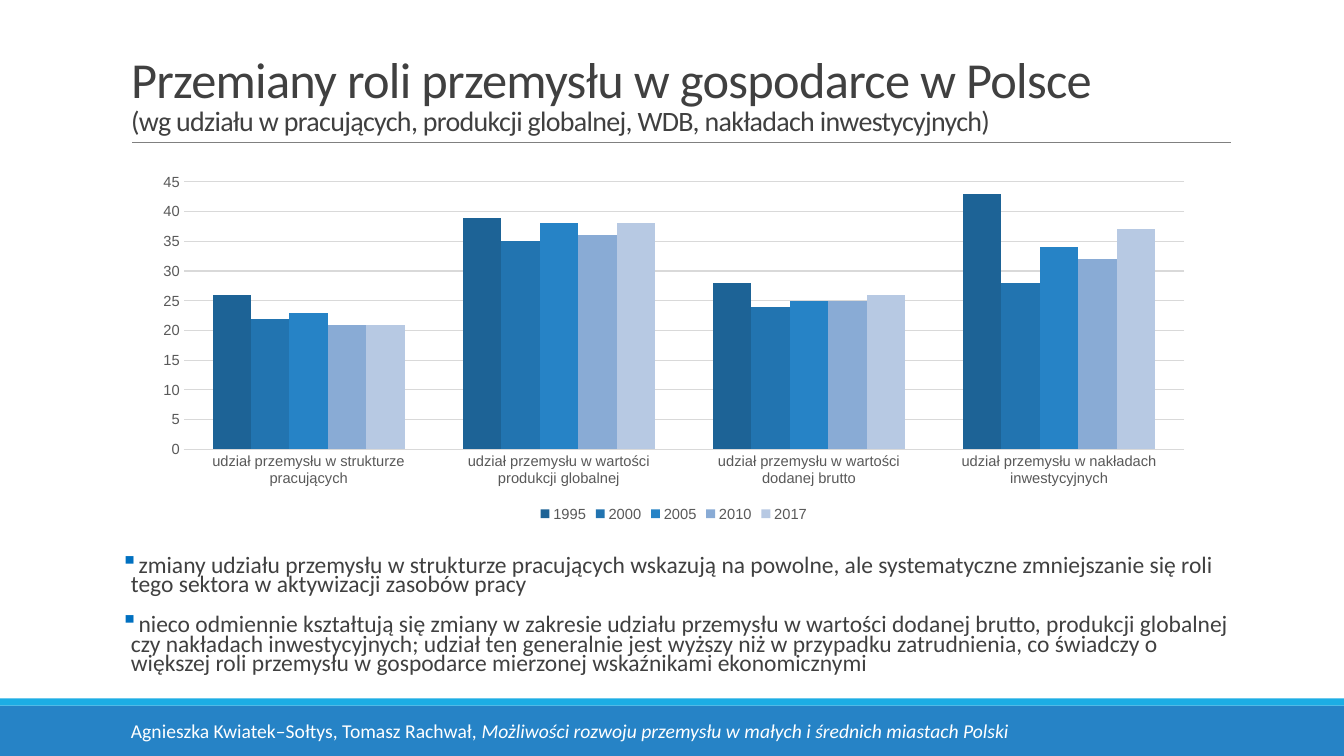
from dataclasses import dataclass
from lxml.etree import SubElement
from pptx import Presentation
from pptx.chart.data import CategoryChartData
from pptx.dml.color import RGBColor
from pptx.enum.chart import XL_CHART_TYPE, XL_LEGEND_POSITION, XL_TICK_MARK
from pptx.enum.shapes import MSO_CONNECTOR, MSO_SHAPE
from pptx.enum.text import MSO_ANCHOR, MSO_AUTO_SIZE, PP_ALIGN
from pptx.oxml.ns import qn
from pptx.util import Cm, Pt


@dataclass(frozen=True)
class Theme:
    """Colours, fonts and type sizes of the slide."""
    ink: str = "404040"
    label: str = "595959"
    grid: str = "D9D9D9"
    rule: str = "808080"
    bullet: str = "0070C0"
    band: str = "2683C6"
    strip: str = "1CADE4"
    white: str = "FFFFFF"
    bars: tuple = ("1D6396", "2274B0", "2683C6", "89ABD5", "B7C9E3")
    face: str = "Calibri"
    chart: str = "Arial"
    head: float = 36
    sub: float = 20
    body: float = 16.8
    foot: float = 14
    small: float = 10.5


THEME = Theme()
CATS = [
    "udział przemysłu w strukturze pracujących",
    "udział przemysłu w wartości produkcji globalnej",
    "udział przemysłu w wartości dodanej brutto",
    "udział przemysłu w nakładach inwestycyjnych",
]
SHARES = {
    "1995": (26, 39, 28, 43),
    "2000": (22, 35, 24, 28),
    "2005": (23, 38, 25, 34),
    "2010": (21, 36, 25, 32),
    "2017": (21, 38, 26, 37),
}
POINTS = [
    "zmiany udziału przemysłu w strukturze pracujących wskazują na powolne, ale "
    "systematyczne zmniejszanie się roli tego sektora w aktywizacji zasobów pracy",
    "nieco odmiennie kształtują się zmiany w zakresie udziału przemysłu w wartości "
    "dodanej brutto, produkcji globalnej czy nakładach inwestycyjnych; udział ten "
    "generalnie jest wyższy niż w przypadku zatrudnienia, co świadczy o większej "
    "roli przemysłu w gospodarce mierzonej wskaźnikami ekonomicznymi",
]


def rgb(code):
    """Turn a hex code into a colour."""
    return RGBColor.from_string(code)


def write(para, text, size, color=THEME.ink, italic=False, track=None):
    """Add one formatted run to a paragraph."""
    run = para.add_run()
    run.text = text
    font = run.font
    font.name, font.size, font.italic = THEME.face, Pt(size), italic
    font.color.rgb = rgb(color)
    if track is not None:
        font._element.set("spc", str(track))


def mark(para):
    """Give a paragraph a hanging square bullet."""
    props = para._p.get_or_add_pPr()
    props.set("marL", str(Cm(0.25)))
    props.set("indent", str(-Cm(0.5)))
    tint = SubElement(props, qn("a:buClr"))
    SubElement(tint, qn("a:srgbClr"), val=THEME.bullet)
    SubElement(props, qn("a:buChar"), char="▪")


def band(slide, top, high, color):
    """Draw a plain bar across the full slide width."""
    bar = slide.shapes.add_shape(MSO_SHAPE.RECTANGLE, 0, Cm(top), Cm(33.87), Cm(high))
    bar.shadow.inherit = False
    bar.fill.solid()
    bar.fill.fore_color.rgb = rgb(color)
    bar.line.fill.background()


def rule(slide, left, right, top):
    """Draw the thin line under the title."""
    line = slide.shapes.add_connector(
        MSO_CONNECTOR.STRAIGHT, Cm(left), Cm(top), Cm(right), Cm(top))
    line.line.color.rgb = rgb(THEME.rule)
    line.line.width = Pt(0.5)
    SubElement(line._element.spPr, qn("a:effectLst"))


def box(slide, left, top, wide, high):
    """Add a wrapping text box and return its frame."""
    frame = slide.shapes.add_textbox(Cm(left), Cm(top), Cm(wide), Cm(high)).text_frame
    frame.word_wrap = True
    return frame


def title(slide):
    """Place and fill the title placeholder."""
    head = slide.shapes.title
    head.left, head.top, head.width, head.height = Cm(3.05), Cm(0.79), Cm(27.33), Cm(2.79)
    frame = head.text_frame
    frame.word_wrap = True
    frame.auto_size = MSO_AUTO_SIZE.NONE
    frame.vertical_anchor = MSO_ANCHOR.BOTTOM
    para = frame.paragraphs[0]
    para.alignment = PP_ALIGN.LEFT
    para.line_spacing = 0.85
    write(para, "Przemiany roli przemysłu w gospodarce w Polsce", THEME.head, track=-50)
    para.add_line_break()
    write(para, "(wg udziału w pracujących, produkcji globalnej, WDB, nakładach "
          "inwestycyjnych)", THEME.sub, track=-50)


def points(slide):
    """Write the bulleted findings."""
    frame = box(slide, 3.05, 13.92, 28.22, 3.53)
    frame.margin_left = frame.margin_right = 0
    for index, text in enumerate(POINTS):
        para = frame.add_paragraph() if index else frame.paragraphs[0]
        mark(para)
        para.line_spacing = 0.7
        para.space_before = Pt(12 if index else 0)
        para.space_after = Pt(2)
        write(para, text, THEME.body)


def footer(slide):
    """Draw the bottom bars and the credit line."""
    band(slide, 17.78, 1.27, THEME.band)
    band(slide, 17.6, 0.18, THEME.strip)
    frame = box(slide, 3.05, 17.98, 27.94, 0.86)
    frame.auto_size = MSO_AUTO_SIZE.SHAPE_TO_FIT_TEXT
    para = frame.paragraphs[0]
    write(para, "Agnieszka Kwiatek–Sołtys, Tomasz Rachwał, ", THEME.foot, THEME.white)
    write(para, "Możliwości rozwoju przemysłu w małych i średnich miastach Polski",
          THEME.foot, THEME.white, italic=True)


def style(font):
    """Format chart lettering."""
    font.name, font.size = THEME.chart, Pt(THEME.small)
    font.color.rgb = rgb(THEME.label)


def stroke(line):
    """Format a pale chart line."""
    line.color.rgb = rgb(THEME.grid)
    line.width = Pt(0.75)


def chart(slide):
    """Add the column chart of industry shares."""
    data = CategoryChartData(number_format="0")
    data.categories = CATS
    for year, shares in SHARES.items():
        data.add_series(year, shares)
    graph = slide.shapes.add_chart(
        XL_CHART_TYPE.COLUMN_CLUSTERED, Cm(3.58), Cm(4.19), Cm(26.8), Cm(9.07), data).chart
    style(graph.font)
    graph.has_title = False
    graph.has_legend = True
    graph.legend.position = XL_LEGEND_POSITION.BOTTOM
    graph.legend.include_in_layout = False
    style(graph.legend.font)
    plot = graph.plots[0]
    plot.gap_width, plot.overlap, plot.vary_by_categories = 150, 0, False
    for series, color in zip(plot.series, THEME.bars):
        series.format.fill.solid()
        series.format.fill.fore_color.rgb = rgb(color)
    cats, vals = graph.category_axis, graph.value_axis
    for axis in (cats, vals):
        axis.major_tick_mark = axis.minor_tick_mark = XL_TICK_MARK.NONE
        style(axis.tick_labels.font)
    stroke(cats.format.line)
    vals.format.line.fill.background()
    vals.minimum_scale, vals.maximum_scale, vals.major_unit = 0, 45, 5
    vals.tick_labels.number_format = "0"
    vals.tick_labels.number_format_is_linked = False
    stroke(vals.major_gridlines.format.line)


def main():
    """Build the slide and save it."""
    deck = Presentation()
    deck.slide_width, deck.slide_height = Cm(33.87), Cm(19.05)
    slide = deck.slides.add_slide(deck.slide_layouts[5])
    footer(slide)
    rule(slide, 3.33, 31.01, 3.58)
    title(slide)
    points(slide)
    chart(slide)
    deck.save("out.pptx")


if __name__ == "__main__":
    main()
